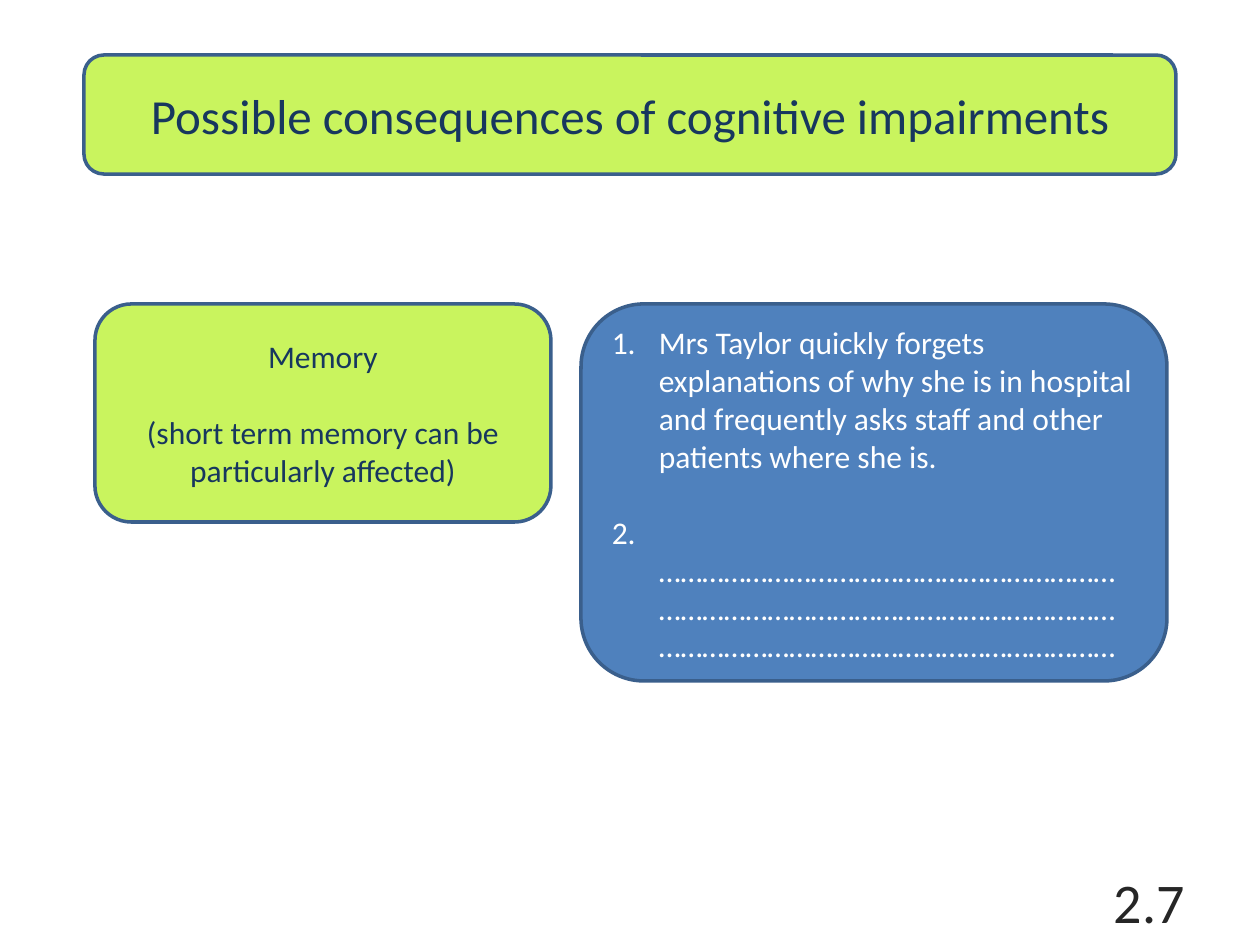
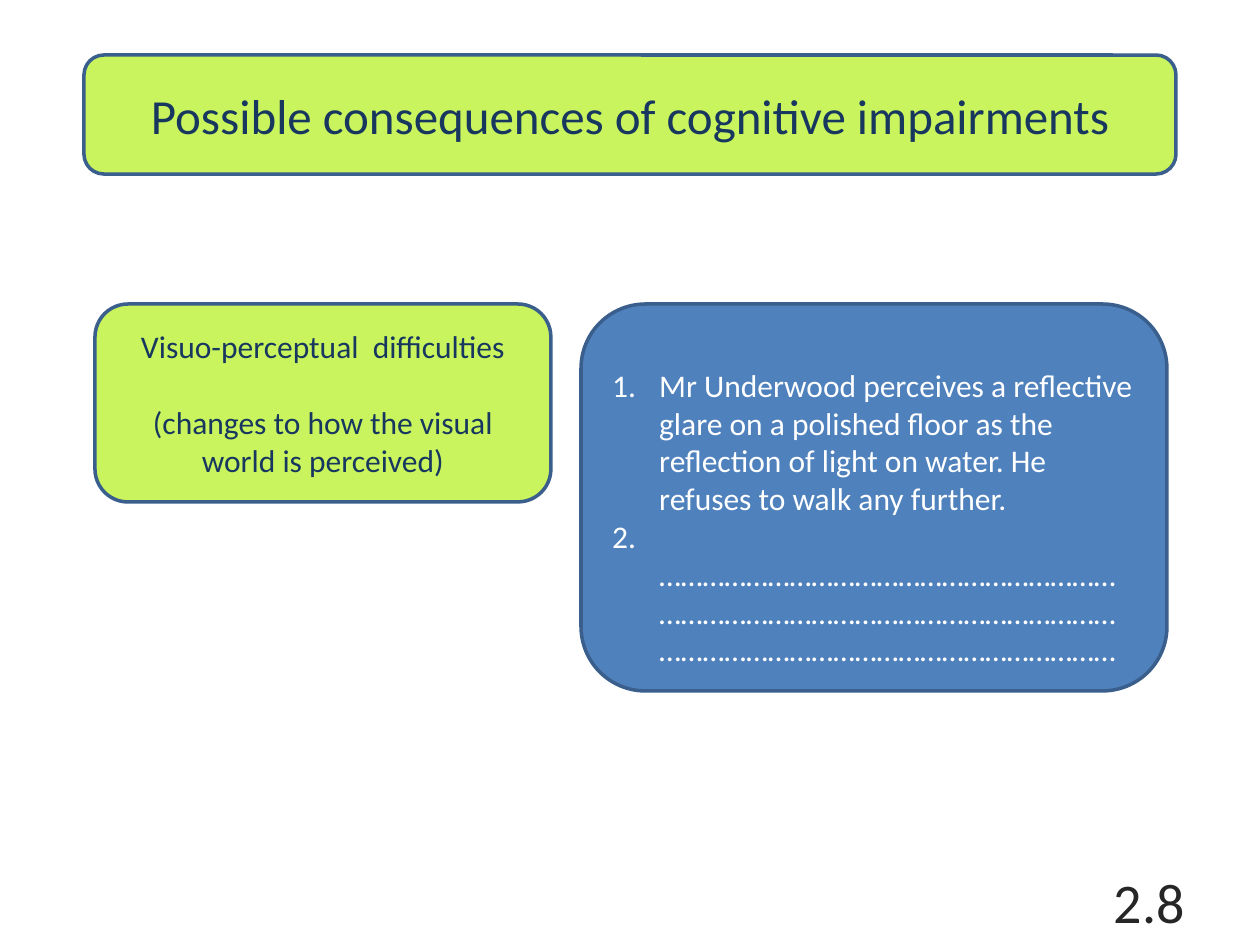
from dataclasses import dataclass
from lxml.etree import SubElement
from pptx import Presentation
from pptx.dml.color import RGBColor
from pptx.enum.shapes import MSO_SHAPE
from pptx.enum.text import MSO_ANCHOR, PP_ALIGN
from pptx.oxml.ns import qn
from pptx.util import Emu, Pt

# Content
TITLE = "Possible consequences of cognitive impairments"
BLANK = " " + "…" * 63  # answer lines to fill in
PAGES = [
    dict(
        topic=["Memory", "(short term memory can be particularly affected)"],
        cases=["Mrs Taylor quickly forgets explanations of why she is in hospital "
               "and frequently asks staff and other patients where she is.", BLANK],
        tall=(218, 377), top=1, gap=22, number="2.7"),
    dict(
        topic=["Visuo-perceptual  difficulties",
               "(changes to how the visual world is perceived)"],
        cases=["Mr Underwood perceives a reflective glare on a polished floor as the "
               "reflection of light on water. He refuses to walk any further.", BLANK],
        tall=(198, 387), top=43, gap=0, number="2.8"),
]


@dataclass(frozen=True)
class Theme:
    font: str = "Calibri"
    lime: str = "C9F45E"
    blue: str = "4F81BD"
    edge: str = "3A5F8C"
    navy: str = "17375E"
    white: str = "FFFFFF"
    dark: str = "262626"
    head: int = 28
    body: int = 18
    page: int = 32
    line: int = 2


THEME = Theme()

# Layout in px
WIDE, HIGH = 1260, 945
BAND = (84, 55, 1092, 119)
TOPIC = (95, 304, 456)
CASES = (581, 304, 586)
NUMBER = (903, 876, 294, 50)
INDENT = 47


def px(n):
    return Emu(round(n * 914400 / 126))


def write(shape, lines, size, tint, align, gap=0):
    """Fill a shape with paragraphs, `gap` points apart."""
    frame = shape.text_frame
    frame.word_wrap = True
    frame.vertical_anchor = MSO_ANCHOR.MIDDLE
    frame.text = "\n".join(lines)
    for i, para in enumerate(frame.paragraphs):
        para.alignment = align
        para.space_before = Pt(gap if i else 0)
        font = para.runs[0].font
        font.name, font.size = THEME.font, Pt(size)
        font.color.rgb = RGBColor.from_string(tint)
    return frame


def panel(slide, box, fill):
    shape = slide.shapes.add_shape(MSO_SHAPE.ROUNDED_RECTANGLE, *map(px, box))
    shape.shadow.inherit = False
    shape.fill.solid()
    shape.fill.fore_color.rgb = RGBColor.from_string(fill)
    shape.line.color.rgb = RGBColor.from_string(THEME.edge)
    shape.line.width = Pt(THEME.line)
    return shape


def count(frame):
    """Number the paragraphs with a hanging indent."""
    for para in frame.paragraphs:
        props = para._p.get_or_add_pPr()
        props.set("marL", str(px(INDENT)))
        props.set("indent", str(-px(INDENT)))
        SubElement(props, qn("a:buFont"), typeface="+mj-lt")
        SubElement(props, qn("a:buAutoNum"), type="arabicPeriod")


def build(deck, page):
    slide = deck.slides.add_slide(deck.slide_layouts[6])
    short, tall = page["tall"]

    # Title band
    band = panel(slide, BAND, THEME.lime)
    write(band, [TITLE], THEME.head, THEME.navy, PP_ALIGN.CENTER)

    # Impairment
    topic = panel(slide, (*TOPIC, short), THEME.lime)
    write(topic, page["topic"], THEME.body, THEME.navy, PP_ALIGN.CENTER, 22)

    # Numbered examples
    cases = panel(slide, (*CASES, tall), THEME.blue)
    frame = write(cases, page["cases"], THEME.body, THEME.white,
                  PP_ALIGN.LEFT, page["gap"])
    frame.vertical_anchor = MSO_ANCHOR.TOP
    frame.margin_top = px(page["top"])
    count(frame)

    # Page number
    number = slide.shapes.add_textbox(*map(px, NUMBER))
    write(number, [page["number"]], THEME.page, THEME.dark, PP_ALIGN.RIGHT)


def main():
    deck = Presentation()
    deck.slide_width, deck.slide_height = px(WIDE), px(HIGH)
    for page in PAGES:
        build(deck, page)
    deck.save("out.pptx")


if __name__ == "__main__":
    main()
